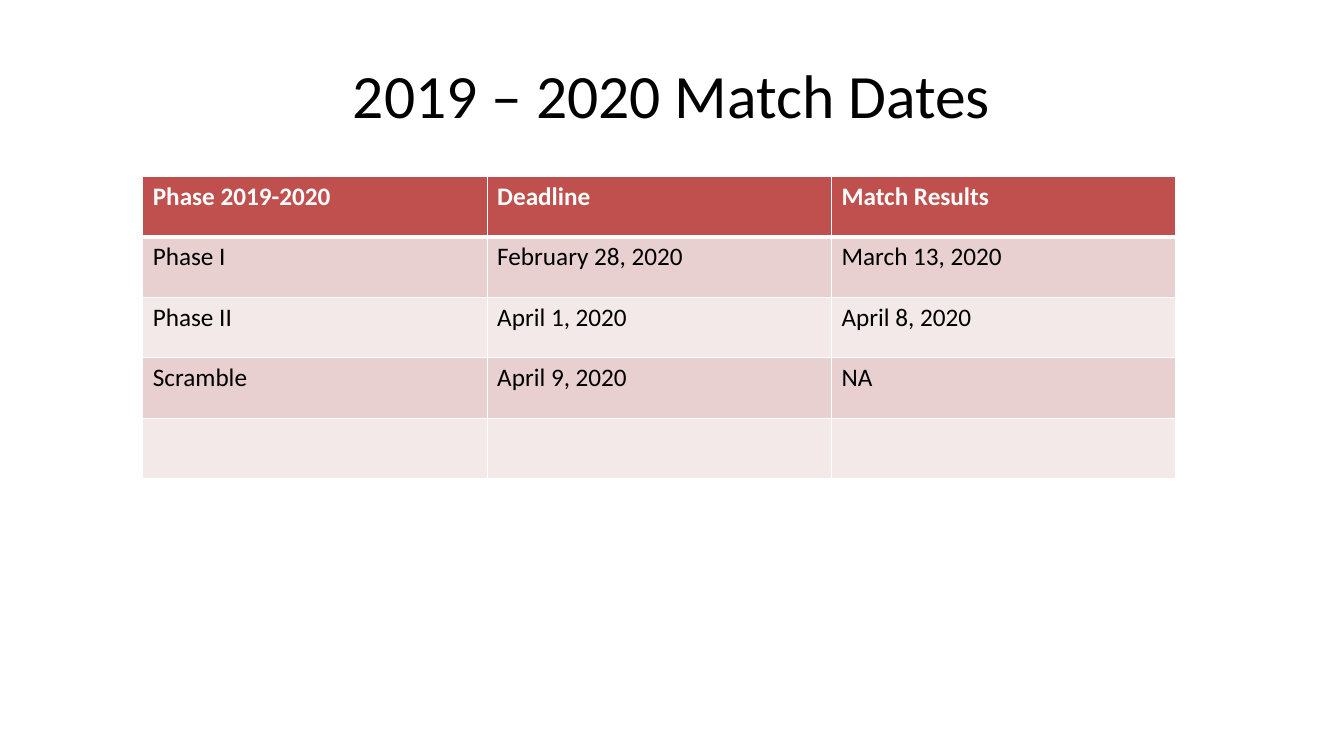
from dataclasses import dataclass

from lxml.etree import SubElement
from pptx import Presentation
from pptx.dml.color import RGBColor as Color
from pptx.enum.text import MSO_ANCHOR as Anchor, PP_ALIGN as Align
from pptx.oxml.ns import qn
from pptx.util import Pt

PX = 9525  # EMU per px, 96 px to the inch


@dataclass(frozen=True)
class Theme:
    font: str = "Calibri"
    title_size: int = 44
    table_size: int = 18
    ink: str = "000000"
    paper: str = "FFFFFF"
    header: str = "C0504D"
    bands: tuple = ("E8D0D0", "F4E9E9")
    rule: int = 1
    header_rule: int = 3


THEME = Theme()
PAGE = (1280, 720)
TITLE_BOX = (64, 29, 1152, 120)
TABLE_BOX = (136, 168, 984, 288)
MATCH_DATES = [
    ("Phase 2019-2020", "Deadline", "Match Results"),
    ("Phase I", "February 28, 2020", "March 13, 2020"),
    ("Phase II", "April 1, 2020", "April 8, 2020"),
    ("Scramble", "April 9, 2020", "NA"),
    ("", "", ""),
]


def to_emu(box):
    return [length * PX for length in box]


def style_text(para, size, color, bold=False):
    para.font.name = THEME.font
    para.font.size = Pt(size)
    para.font.bold = bold
    para.font.color.rgb = Color.from_string(color)


def add_borders(cell, top, bottom):
    """Draw the cell's four edges; widths are in points."""
    properties = cell._tc.get_or_add_tcPr()
    widths = {"a:lnL": THEME.rule, "a:lnR": THEME.rule, "a:lnT": top, "a:lnB": bottom}
    for edge, width in widths.items():
        line = SubElement(properties, qn(edge), w=str(Pt(width)))
        fill = SubElement(line, qn("a:solidFill"))
        SubElement(fill, qn("a:srgbClr"), val=THEME.paper)


def add_title(slide, box, text):
    frame = slide.shapes.add_textbox(*to_emu(box)).text_frame
    frame.word_wrap = True
    frame.vertical_anchor = Anchor.MIDDLE
    para = frame.paragraphs[0]
    para.text = text
    para.alignment = Align.CENTER
    style_text(para, THEME.title_size, THEME.ink)


def add_dates_table(slide, box, rows):
    # The table's columns and rows share the box equally
    table = slide.shapes.add_table(len(rows), len(rows[0]), *to_emu(box)).table

    for row_index, row in enumerate(rows):
        is_header = row_index == 0
        fill = THEME.header if is_header else THEME.bands[(row_index - 1) % 2]
        top = THEME.header_rule if row_index == 1 else THEME.rule
        bottom = THEME.header_rule if is_header else THEME.rule
        for column_index, text in enumerate(row):
            cell = table.cell(row_index, column_index)
            add_borders(cell, top, bottom)
            cell.fill.solid()
            cell.fill.fore_color.rgb = Color.from_string(fill)
            para = cell.text_frame.paragraphs[0]
            if text:
                para.text = text
            color = THEME.paper if is_header else THEME.ink
            style_text(para, THEME.table_size, color, is_header)


def main():
    deck = Presentation()
    deck.slide_width, deck.slide_height = to_emu(PAGE)
    slide = deck.slides.add_slide(deck.slide_layouts[6])
    slide.background.fill.solid()
    slide.background.fill.fore_color.rgb = Color.from_string(THEME.paper)

    # Heading above the schedule
    add_title(slide, TITLE_BOX, "2019 – 2020 Match Dates")
    add_dates_table(slide, TABLE_BOX, MATCH_DATES)

    deck.save("out.pptx")


if __name__ == "__main__":
    main()
